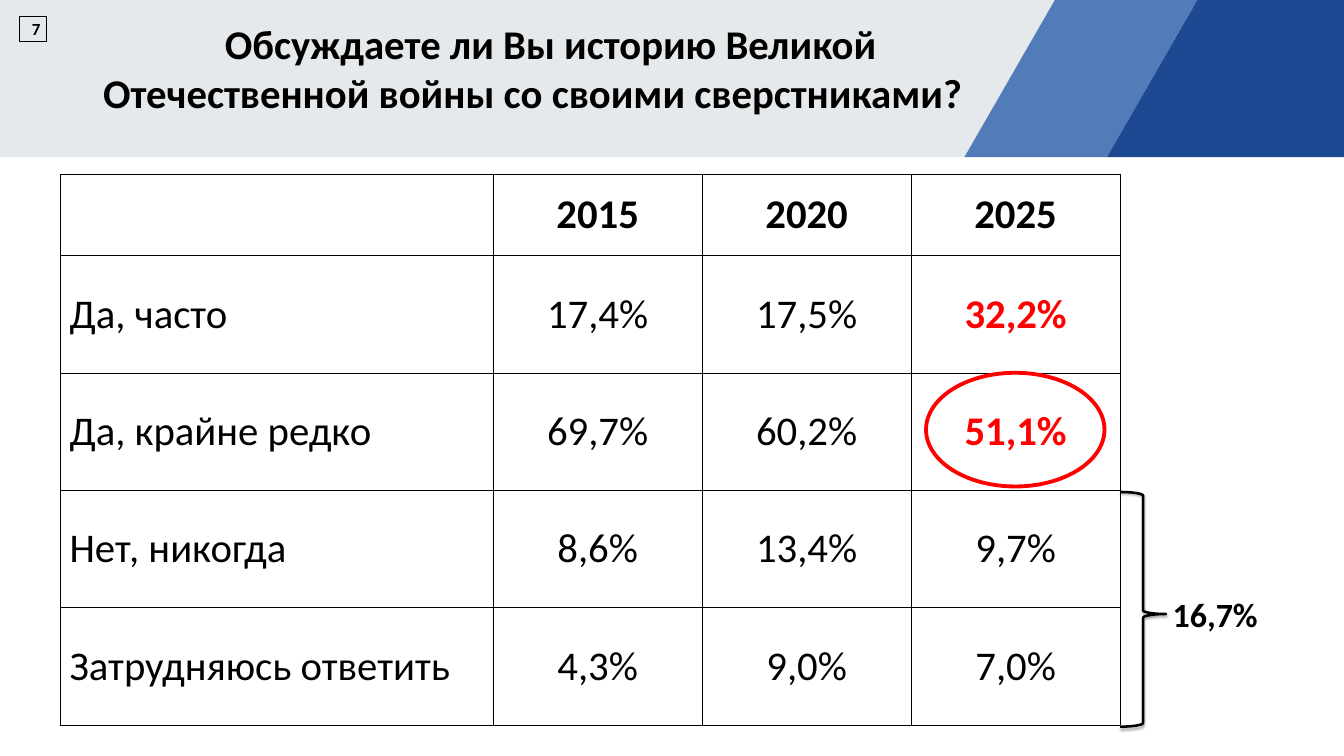
from lxml.etree import SubElement
from pptx import Presentation
from pptx.dml.color import RGBColor
from pptx.enum.shapes import MSO_SHAPE
from pptx.enum.text import MSO_ANCHOR, MSO_AUTO_SIZE, PP_ALIGN
from pptx.oxml import parse_xml
from pptx.oxml.ns import nsdecls, qn
from pptx.util import Inches, Pt

BLACK = RGBColor(0x00, 0x00, 0x00)
RED = RGBColor(0xFF, 0x00, 0x00)
GREY = RGBColor(0xE6, 0xE9, 0xEB)
SKY = RGBColor(0x51, 0x7B, 0xB9)
NAVY = RGBColor(0x1D, 0x49, 0x92)


class Board:
    """Style and current slide; lengths are percent of the slide's size."""

    font = "Calibri"
    large = 48

    def __init__(self, deck):
        self.wide, self.high = deck.slide_width, deck.slide_height
        self.slide = deck.slides.add_slide(deck.slide_layouts[5])
        self.shapes = self.slide.shapes

    def x(self, share):
        return round(self.wide * share / 100)

    def y(self, share):
        return round(self.high * share / 100)

    def area(self, left, top, width, height):
        return self.x(left), self.y(top), self.x(width), self.y(height)

    def put(self, frame, text, size, align=PP_ALIGN.LEFT, bold=True, color=BLACK):
        frame.text = text
        frame.word_wrap = True
        para = frame.paragraphs[0]
        para.alignment = align
        for run in para.runs:
            run.font.name, run.font.size = self.font, Pt(size)
            run.font.bold = bold
            run.font.color.rgb = color
        return para

    def band(self, color, points):
        spots = [(self.x(x), self.y(y)) for x, y in points]
        build = self.shapes.build_freeform(*spots[0])
        build.add_line_segments(spots[1:], close=True)
        shape = build.convert_to_shape()
        shape.shadow.inherit = False
        shape.fill.solid()
        shape.fill.fore_color.rgb = color
        shape.line.fill.background()

    def title(self, text, area, indent):
        title = self.shapes.title
        title.left, title.top, title.width, title.height = self.area(*area)
        para = self.put(title.text_frame, text, self.large, PP_ALIGN.CENTER)
        title.text_frame.auto_size = MSO_AUTO_SIZE.NONE
        title.text_frame.vertical_anchor = MSO_ANCHOR.TOP
        para._p.get_or_add_pPr().set("indent", str(self.x(indent)))
        # Bring the title in front of the bands
        self.shapes._spTree.append(title._element)

    def outline(self, kind, area, color, weight):
        shape = self.shapes.add_shape(kind, *self.area(*area))
        shape.shadow.inherit = False
        shape.fill.background()
        shape.line.color.rgb = color
        shape.line.width = Pt(weight)
        return shape

    def shade(self, shape):
        effect = shape._element.spPr.find(qn("a:effectLst"))
        effect.append(parse_xml(
            f'<a:outerShdw {nsdecls("a")} blurRad="{Pt(3.1)}" dist="{Pt(1.8)}" '
            'dir="5400000" rotWithShape="0"><a:srgbClr val="000000">'
            '<a:alpha val="35000"/></a:srgbClr></a:outerShdw>'))

    def label(self, text, area, size):
        box = self.shapes.add_textbox(*self.area(*area))
        self.put(box.text_frame, text, size)

    def border(self, cell, weight):
        props = cell._tc.get_or_add_tcPr()
        for side in ("lnL", "lnR", "lnT", "lnB"):
            line = SubElement(props, qn(f"a:{side}"), w=str(Pt(weight)))
            fill = SubElement(line, qn("a:solidFill"))
            SubElement(fill, qn("a:srgbClr"), val=str(BLACK))

    def table(self, data, left, top, cols, rows, marked):
        area = self.area(left, top, sum(cols), sum(rows))
        table = self.shapes.add_table(len(rows), len(cols), *area).table
        table.first_row = table.horz_banding = False
        for col, width in zip(table.columns, cols):
            col.width = self.x(width)
        for row, height in zip(table.rows, rows):
            row.height = self.y(height)
        for r, line in enumerate(data):
            for c, text in enumerate(line):
                cell = table.cell(r, c)
                self.border(cell, 0.5)
                cell.fill.background()
                cell.vertical_anchor = MSO_ANCHOR.MIDDLE
                cell.margin_top = cell.margin_bottom = cell.margin_right = 0
                cell.margin_left = 0 if c else self.x(0.68)
                mark = (r, c) in marked
                self.put(cell.text_frame, text, self.large,
                         PP_ALIGN.CENTER if c else PP_ALIGN.LEFT,
                         r == 0 or mark, RED if mark else BLACK)


def main():
    deck = Presentation()
    deck.slide_width, deck.slide_height = Inches(21.99), Inches(12.37)
    board = Board(deck)

    # Header bands with slanted edges
    base, slant = 20.78, 6.73
    first, second = 71.76, 82.36
    board.band(GREY, [(0, 0), (first + slant, 0), (first, base), (0, base)])
    board.band(SKY, [(first + slant, 0), (second + slant, 0),
                     (second, base), (first, base)])
    board.band(NAVY, [(second + slant, 0), (100, 0), (100, base), (second, base)])

    # Title and slide number
    board.title("Обсуждаете ли Вы историю Великой Отечественной войны "
                "со своими сверстниками?", (6.05, 2.1, 67.21, 18.27), 2.68)
    number = board.outline(MSO_SHAPE.RECTANGLE, (1.46, 2.1, 2, 3.4), BLACK, 0.75)
    board.put(number.text_frame, "7", 20, PP_ALIGN.RIGHT)
    number.text_frame.vertical_anchor = MSO_ANCHOR.MIDDLE

    # Answers by year
    data = [
        ("", "2015", "2020", "2025"),
        ("Да, часто", "17,4%", "17,5%", "32,2%"),
        ("Да, крайне редко", "69,7%", "60,2%", "51,1%"),
        ("Нет, никогда", "8,6%", "13,4%", "9,7%"),
        ("Затрудняюсь ответить", "4,3%", "9,0%", "7,0%"),
    ]
    left, top = 4.5, 23.04
    cols = [32.2] + [15.55] * 3
    rows = [10.75] + [15.52] * 4
    board.table(data, left, top, cols, rows, {(1, 3), (2, 3)})

    # Brace over the last two rows, with their sum
    brace = board.outline(MSO_SHAPE.RIGHT_BRACE,
                          (left + sum(cols), top + sum(rows[:3]) + 0.25,
                           3.41, sum(rows[3:])), BLACK, 3)
    brace.adjustments[0], brace.adjustments[1] = 0.08, 0.52
    board.shade(brace)
    board.label("16,7%", (86.81, 78.17, 8.64, 6.22), 40)

    # Ring around the 2025 share of rare talks
    board.outline(MSO_SHAPE.OVAL, (68.9, 49.31, 13.28, 15.04), RED, 4.5)

    deck.save("out.pptx")


if __name__ == "__main__":
    main()
